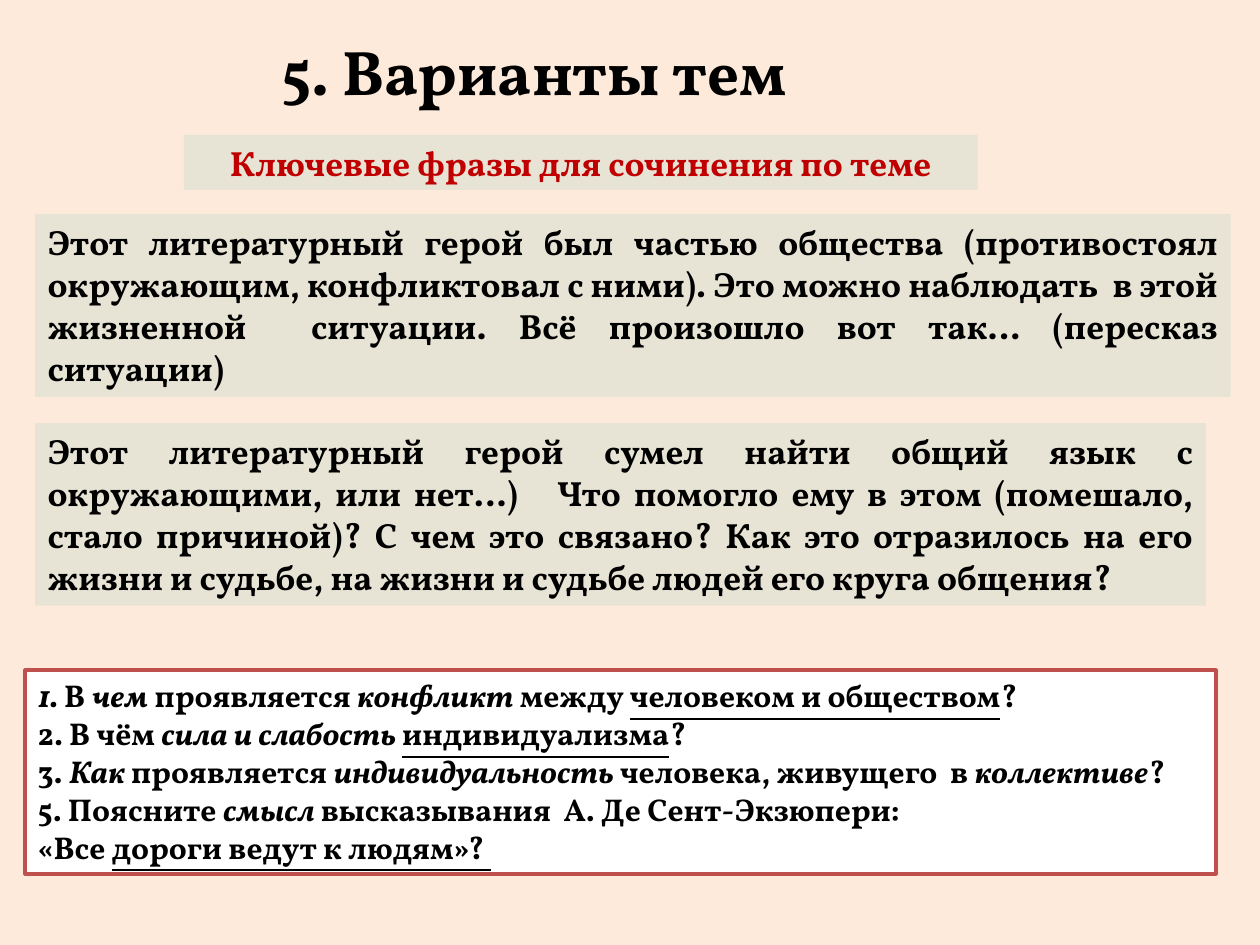
from pptx import Presentation
from pptx.dml.color import RGBColor
from pptx.enum.shapes import MSO_SHAPE
from pptx.enum.text import MSO_ANCHOR, MSO_AUTO_SIZE, PP_ALIGN
from pptx.util import Cm, Pt

RECTANGLE = MSO_SHAPE.RECTANGLE
TOP = MSO_ANCHOR.TOP
GROW = MSO_AUTO_SIZE.SHAPE_TO_FIT_TEXT
CENTER, JUSTIFY = PP_ALIGN.CENTER, PP_ALIGN.JUSTIFY

PEACH = RGBColor(0xFD, 0xEA, 0xDA)
SAND = RGBColor(0xE7, 0xE4, 0xD5)
WHITE = RGBColor(0xFF, 0xFF, 0xFF)
BLACK = RGBColor(0, 0, 0)
RED = RGBColor(0xC0, 0, 0)
BORDER_RED = RGBColor(0xC0, 0x50, 0x4D)

FONT = "Vollkorn"
PLAIN, ITALIC, UNDERLINE = {}, {"italic": True}, {"underline": True}
HANGING = Cm(0.97)


def add_panel(left, top, width, height, fill):
    """Add a borderless rectangle, or a text box when there is no fill."""
    box = [Cm(value) for value in (left, top, width, height)]
    if fill is None:
        shape = slide.shapes.add_textbox(*box)
    else:
        shape = slide.shapes.add_shape(RECTANGLE, *box)
        shape.shadow.inherit = False
        shape.fill.solid()
        shape.fill.fore_color.rgb = fill
        shape.line.fill.background()
    frame_format = {"word_wrap": True, "auto_size": GROW, "vertical_anchor": TOP}
    for name, value in frame_format.items():
        setattr(shape.text_frame, name, value)
    return shape


def add_runs(paragraph, runs, size, color, alignment):
    """Write (text, style) pairs into a paragraph in bold."""
    paragraph.alignment = alignment
    for text, style in runs:
        run = paragraph.add_run()
        run.text = text
        run.font.color.rgb = color
        run_format = {"name": FONT, "size": Pt(size), "bold": True, **style}
        for name, value in run_format.items():
            setattr(run.font, name, value)


presentation = Presentation()
presentation.slide_width = Cm(25.4)
presentation.slide_height = Cm(19.05)
slide = presentation.slides.add_slide(presentation.slide_layouts[6])
slide.background.fill.solid()
slide.background.fill.fore_color.rgb = PEACH

# Title, subtitle and the two key phrases
panels = [
    ((3.3, 0.53, 15.19, 1.8), None, 36, BLACK, CENTER, "5. Варианты тем "),
    ((3.71, 2.72, 16, 1.11), SAND, 20, RED, CENTER,
     "Ключевые фразы для сочинения по теме"),
    ((0.71, 4.32, 24.1, 3.68), SAND, 20, BLACK, JUSTIFY,
     "Этот литературный герой был частью общества (противостоял окружающим, "
     "конфликтовал с ними). Это можно наблюдать  в этой жизненной  ситуации. "
     "Всё произошло вот так… (пересказ ситуации)"),
    ((0.71, 8.53, 23.6, 3.68), SAND, 20, BLACK, JUSTIFY,
     "Этот литературный герой сумел найти общий язык с окружающими, или нет…)   "
     "Что помогло ему в этом (помешало, стало причиной)? С чем это связано? "
     "Как это отразилось на его жизни и судьбе, на жизни и судьбе людей "
     "его круга общения?"),
]
for box, fill, size, color, alignment, text in panels:
    shape = add_panel(*box, fill)
    add_runs(shape.text_frame.paragraphs[0], [(text, PLAIN)], size, color, alignment)

# Framed list of essay topics: (hanging indent, runs)
topics = [
    (True, [("1. ", ITALIC), ("В ", PLAIN), ("чем", ITALIC),
            (" проявляется ", PLAIN), ("конфликт", ITALIC), (" между ", PLAIN),
            ("человеком и обществом", UNDERLINE), ("? ", PLAIN)]),
    (True, [("2. В чём ", PLAIN), ("сила и слабость ", ITALIC),
            ("индивидуализма", UNDERLINE), ("? ", PLAIN)]),
    (False, [("3. ", PLAIN), ("Как", ITALIC), (" проявляется ", PLAIN),
             ("индивидуальность", ITALIC), (" человека, живущего  в ", PLAIN),
             ("коллективе", ITALIC), ("?", PLAIN)]),
    (False, [("5. Поясните ", PLAIN), ("смысл ", ITALIC),
             ("высказывания  А. Де Сент-Экзюпери: ", PLAIN)]),
    (False, [("«Все ", PLAIN), ("дороги ведут к людям»? ", UNDERLINE)]),
]
topic_panel = add_panel(0.51, 13.51, 24, 4.11, WHITE)
topic_panel.line.color.rgb = BORDER_RED
topic_panel.line.width = Pt(2)
frame = topic_panel.text_frame
for index, (hanging, runs) in enumerate(topics):
    paragraph = frame.add_paragraph() if index else frame.paragraphs[0]
    add_runs(paragraph, runs, 18, BLACK, JUSTIFY)
    if hanging:
        properties = paragraph._p.get_or_add_pPr()
        properties.set("marL", str(HANGING))
        properties.set("indent", str(-HANGING))

presentation.save("out.pptx")
